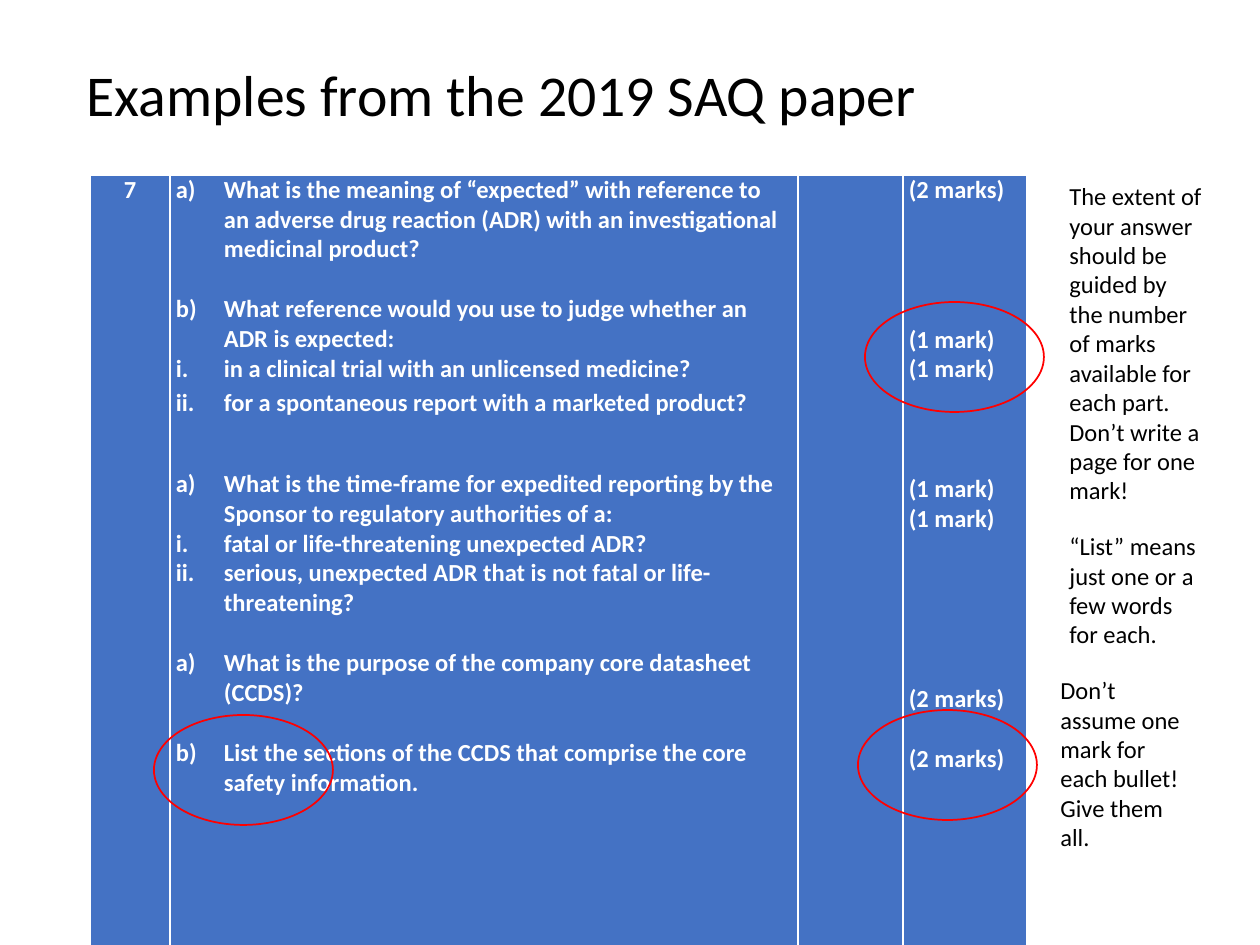
from dataclasses import dataclass

from lxml.etree import SubElement
from pptx import Presentation
from pptx.dml.color import RGBColor
from pptx.enum.shapes import MSO_SHAPE as Preset
from pptx.enum.text import MSO_ANCHOR as Anchor, MSO_AUTO_SIZE as AutoSize, PP_ALIGN as Align
from pptx.oxml import parse_xml
from pptx.oxml.ns import nsdecls, qn
from pptx.util import Emu, Pt

SCALE = 914400 / 126
FONT = "Calibri"
BLACK = RGBColor(0x00, 0x00, 0x00)
WHITE = RGBColor(0xFF, 0xFF, 0xFF)
RED = RGBColor(0xFF, 0x00, 0x00)
BLUE = RGBColor(0x44, 0x72, 0xC4)
LETTER = "alphaLcParenR"
ROMAN = "romanLcPeriod"
HANGING = 48
BLANK_LINE = 30


@dataclass(frozen=True)
class Line:
    text: str
    numbering: str = ""
    start: int = 1
    gap: int = 0
    spacing: float = 1.0


@dataclass(frozen=True)
class Note:
    left: int
    top: int
    height: int
    text: str
    filled: bool = True


@dataclass(frozen=True)
class Ring:
    left: int
    top: int


COLUMNS = [80, 628, 105, 124]
QUESTIONS = [
    Line("What is the meaning of “expected” with reference to an adverse drug reaction (ADR) "
         "with an investigational medicinal product?", LETTER),
    Line("What reference would you use to judge whether an ADR is expected:",
         LETTER, 2, gap=BLANK_LINE),
    Line("in a clinical trial with an unlicensed medicine?", ROMAN),
    Line("for a spontaneous report with a marketed product?", ROMAN, 2, spacing=1.15),
    Line("What is the time-frame for expedited reporting by the Sponsor to regulatory "
         "authorities of a:", LETTER, gap=51),
    Line("fatal or life-threatening unexpected ADR?", ROMAN),
    Line("serious, unexpected ADR that is not fatal or life-threatening?", ROMAN, 2),
    Line("What is the purpose of the company core datasheet (CCDS)?", LETTER, gap=BLANK_LINE),
    Line("List the sections of the CCDS that comprise the core safety information.",
         LETTER, 2, gap=BLANK_LINE),
]
MARKS = [
    Line("(2 marks)"),
    Line("(1 mark)", gap=4 * BLANK_LINE),
    Line("(1 mark)"),
    Line("(1 mark)", gap=3 * BLANK_LINE),
    Line("(1 mark)"),
    Line("(2 marks)", gap=5 * BLANK_LINE),
    Line("(2 marks)", gap=BLANK_LINE),
]
NOTES = [
    Note(1057, 175, 339, "The extent of your answer should be guided by the number of marks "
         "available for each part. Don’t write a page for one mark!", filled=False),
    Note(1057, 525, 131, "“List” means just one or a few words for each."),
    Note(1048, 669, 190, "Don’t assume one mark for each bullet! Give them all."),
]
RINGS = [Ring(865, 302), Ring(154, 715), Ring(858, 710)]


def px(value: int) -> Emu:
    return Emu(round(value * SCALE))


def add_span(para, text: str, size: int, color: RGBColor, bold: bool = False) -> None:
    span = para.add_run()
    span.text = text
    span.font.name = FONT
    span.font.size = Pt(size)
    span.font.bold = bold
    span.font.color.rgb = color


def add_title(page, text: str) -> None:
    title = page.shapes.title
    title.left, title.top, title.width, title.height = px(74), px(6), px(1086), px(183)
    frame = title.text_frame
    frame.auto_size = AutoSize.NONE
    frame.vertical_anchor = Anchor.MIDDLE
    para = frame.paragraphs[0]
    para.alignment = Align.LEFT
    para.line_spacing = 0.9
    add_span(para, text, 33, BLACK)


def number_para(para, line: Line) -> None:
    properties = para._p.get_or_add_pPr()
    properties.set("marL", str(px(HANGING)))
    properties.set("indent", str(-px(HANGING)))
    SubElement(properties, qn("a:buFont"), typeface="+mj-lt")
    SubElement(properties, qn("a:buAutoNum"), type=line.numbering, startAt=str(line.start))


def style_cell(cell) -> None:
    cell.margin_left = cell.margin_right = px(6)
    cell.margin_top = cell.margin_bottom = 0
    cell.vertical_anchor = Anchor.TOP
    cell.fill.solid()
    cell.fill.fore_color.rgb = BLUE
    properties = cell._tc.get_or_add_tcPr()
    borders = [("lnL", 1), ("lnR", 1), ("lnT", 1), ("lnB", 3)]
    for index, (side, width) in enumerate(borders):
        properties.insert(index, parse_xml(
            f'<a:{side} {nsdecls("a")} w="{Pt(width)}"><a:solidFill>'
            f'<a:srgbClr val="{WHITE}"/></a:solidFill></a:{side}>'))


def fill_cell(cell, lines: list[Line], alignment: Align = Align.LEFT) -> None:
    frame = cell.text_frame
    for index, line in enumerate(lines):
        para = frame.add_paragraph() if index else frame.paragraphs[0]
        para.alignment = alignment
        para.line_spacing = line.spacing
        para.space_before = px(line.gap)
        if line.numbering:
            number_para(para, line)
        add_span(para, line.text, 14, WHITE, bold=True)


def add_questions(page) -> None:
    holder = page.shapes.add_table(1, len(COLUMNS), px(90), px(175), px(sum(COLUMNS)), px(1114))
    table = holder.table
    for column, width in zip(table.columns, COLUMNS):
        column.width = px(width)
    for cell in table.iter_cells():
        style_cell(cell)
    fill_cell(table.cell(0, 0), [Line("7")], Align.CENTER)
    fill_cell(table.cell(0, 1), QUESTIONS)
    fill_cell(table.cell(0, 3), MARKS)


def add_note(page, note: Note) -> None:
    bounds = px(note.left), px(note.top), px(159), px(note.height)
    if note.filled:
        box = page.shapes.add_shape(Preset.RECTANGLE, *bounds)
        box.shadow.inherit = False
        box.fill.solid()
        box.fill.fore_color.rgb = WHITE
        box.line.fill.background()
    else:
        box = page.shapes.add_textbox(*bounds)
    frame = box.text_frame
    frame.word_wrap = True
    frame.auto_size = AutoSize.SHAPE_TO_FIT_TEXT
    frame.vertical_anchor = Anchor.TOP
    para = frame.paragraphs[0]
    para.alignment = Align.LEFT
    add_span(para, note.text, 14, BLACK)


def add_ring(page, ring: Ring) -> None:
    oval = page.shapes.add_shape(Preset.OVAL, px(ring.left), px(ring.top), px(179), px(110))
    oval.shadow.inherit = False
    oval.fill.background()
    oval.line.color.rgb = RED
    oval.line.width = Pt(1)


def main() -> None:
    deck = Presentation()
    deck.slide_width, deck.slide_height = px(1260), px(945)
    page = deck.slides.add_slide(deck.slide_layouts[5])
    add_title(page, "Examples from the 2019 SAQ paper")
    add_questions(page)
    for note in NOTES:
        add_note(page, note)
    for ring in RINGS:
        add_ring(page, ring)
    deck.save("out.pptx")


if __name__ == "__main__":
    main()
